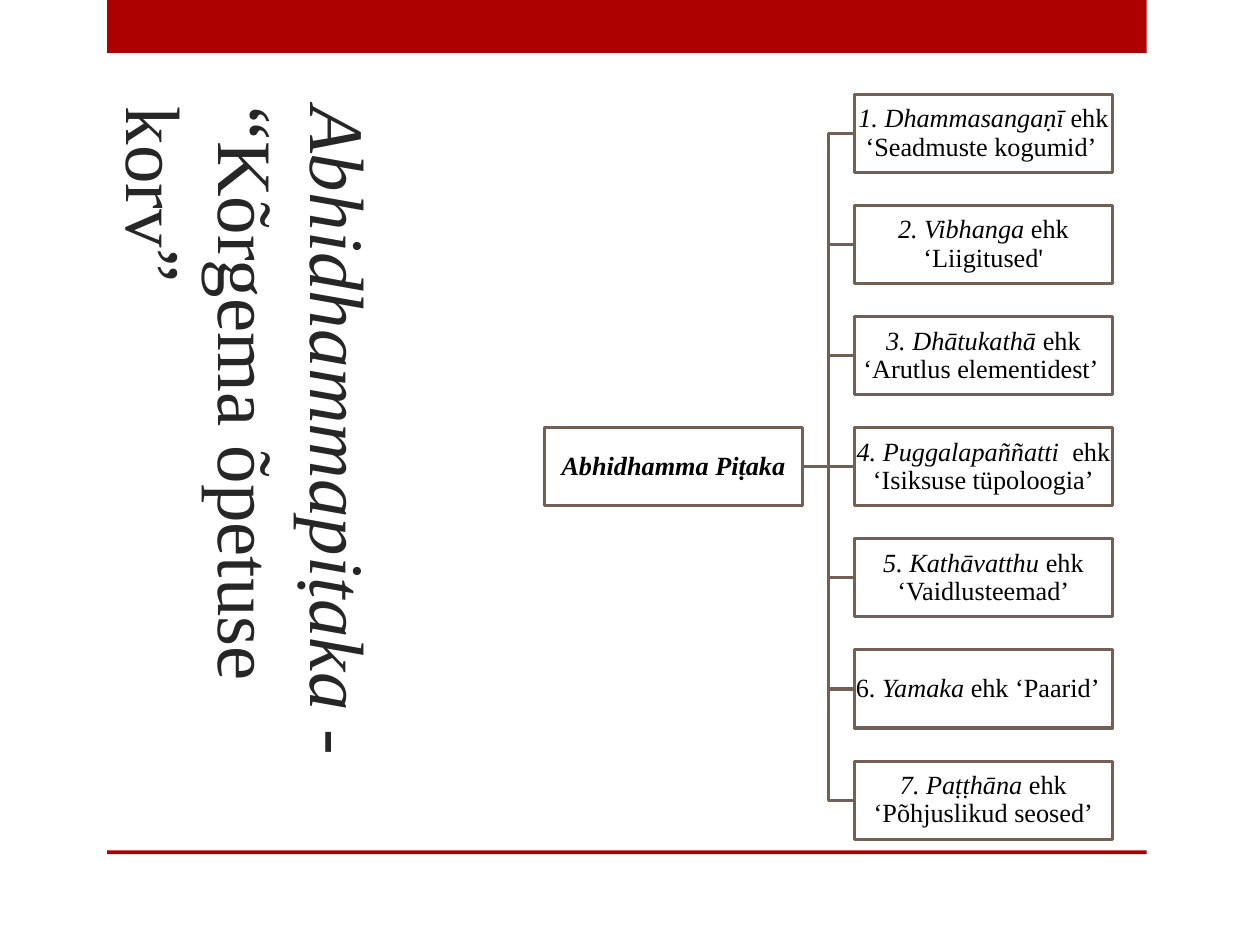
from lxml.etree import SubElement
from pptx import Presentation
from pptx.dml.color import RGBColor
from pptx.enum.shapes import MSO_CONNECTOR as Connector, MSO_SHAPE as Shape
from pptx.enum.text import MSO_ANCHOR as Anchor, PP_ALIGN as Align
from pptx.oxml.ns import qn
from pptx.util import Inches, Pt

RED = RGBColor(0xAD, 0x01, 0x01)
BROWN = RGBColor(0x72, 0x60, 0x56)
WHITE = RGBColor(0xFF, 0xFF, 0xFF)
BLACK = RGBColor(0, 0, 0)
CHARCOAL = RGBColor(0x26, 0x26, 0x26)
FONT = "Times New Roman"
LINE_WIDTH = Pt(1.75)

# Tree grid: two columns, seven rows
BOX_WIDTH, BOX_HEIGHT = 2.05, 0.62
TREE_LEFT, TREE_TOP = 4.32, 0.75
COLUMN_STEP = 2.46
ROW_STEP = (6.04 - TREE_TOP) / 6
ROOT_ROW = 3

# Each text is a list of (words, italic)
TITLE = [("Abhidhammapiṭaka", True), (" - “Kõrgema õpetuse korv”", False)]
ROOT = [("Abhidhamma Piṭaka", True)]
BOOKS = [
    [("1. Dhammasangaṇī ", True), ("ehk ‘Seadmuste kogumid’ ", False)],
    [("2. Vibhanga ", True), ("ehk ‘Liigitused'", False)],
    [("3. Dhātukathā", True), (" ehk ‘Arutlus elementidest’ ", False)],
    [("4. Puggalapaññatti", True), ("  ehk ‘Isiksuse tüpoloogia’", False)],
    [("5. Kathāvatthu", True), (" ehk ‘Vaidlusteemad’", False)],
    [("6. ", False), ("Yamaka", True), (" ehk ‘Paarid’  ", False)],
    [("7. Paṭṭhāna", True), (" ehk ‘Põhjuslikud seosed’", False)],
]


def write_runs(paragraph, parts, size, color, bold=False):
    for words, italic in parts:
        run = paragraph.add_run()
        run.text = words
        font = run.font
        font.name, font.size = FONT, Pt(size)
        font.bold, font.italic = bold, italic
        font.color.rgb = color


def add_rectangle(slide, left, top, width, height, fill):
    rectangle = slide.shapes.add_shape(
        Shape.RECTANGLE, Inches(left), Inches(top), Inches(width), Inches(height))
    rectangle.shadow.inherit = False
    rectangle.fill.solid()
    rectangle.fill.fore_color.rgb = fill
    rectangle.line.fill.background()
    return rectangle


def add_title(slide):
    """Add the title, which runs from top to bottom."""
    title = slide.shapes.add_textbox(Inches(0.83), Inches(0.75), Inches(2), Inches(5.92))
    frame = title.text_frame
    frame.word_wrap = True
    frame.vertical_anchor = Anchor.BOTTOM
    frame._txBody.bodyPr.set("vert", "eaVert")
    write_runs(frame.paragraphs[0], TITLE, 44, CHARCOAL)


def add_node(slide, column, row, parts, bold=False):
    node = add_rectangle(slide, TREE_LEFT + column * COLUMN_STEP,
                         TREE_TOP + row * ROW_STEP, BOX_WIDTH, BOX_HEIGHT, WHITE)
    node.line.color.rgb = BROWN
    node.line.width = LINE_WIDTH
    frame = node.text_frame
    frame.word_wrap = True
    frame.vertical_anchor = Anchor.MIDDLE
    frame.margin_left = frame.margin_right = Inches(0.01)
    frame.margin_top = frame.margin_bottom = Inches(0.01)
    paragraph = frame.paragraphs[0]
    paragraph.alignment = Align.CENTER
    paragraph.line_spacing = 0.9
    write_runs(paragraph, parts, 15, BLACK, bold)
    return node


def join(slide, parent, child, kind):
    """Connect the parent's right side to the child's left side."""
    branch = slide.shapes.add_connector(kind, 0, 0, 0, 0)
    branch.begin_connect(parent, 3)
    branch.end_connect(child, 1)
    branch.line.color.rgb = BROWN
    branch.line.width = LINE_WIDTH
    SubElement(branch._element.spPr, qn("a:effectLst"))


def add_tree(slide):
    root = add_node(slide, 0, ROOT_ROW, ROOT, bold=True)
    for row, parts in enumerate(BOOKS):
        book = add_node(slide, 1, row, parts)
        kind = Connector.STRAIGHT if row == ROOT_ROW else Connector.ELBOW
        join(slide, root, book, kind)


def main():
    deck = Presentation()
    deck.slide_width, deck.slide_height = Inches(10), Inches(7.5)
    slide = deck.slides.add_slide(deck.slide_layouts[6])
    for top, height in ((0, 0.42), (6.75, 0.03)):
        add_rectangle(slide, 0.85, top, 8.25, height, RED)
    add_title(slide)
    add_tree(slide)
    deck.save("out.pptx")


if __name__ == "__main__":
    main()
